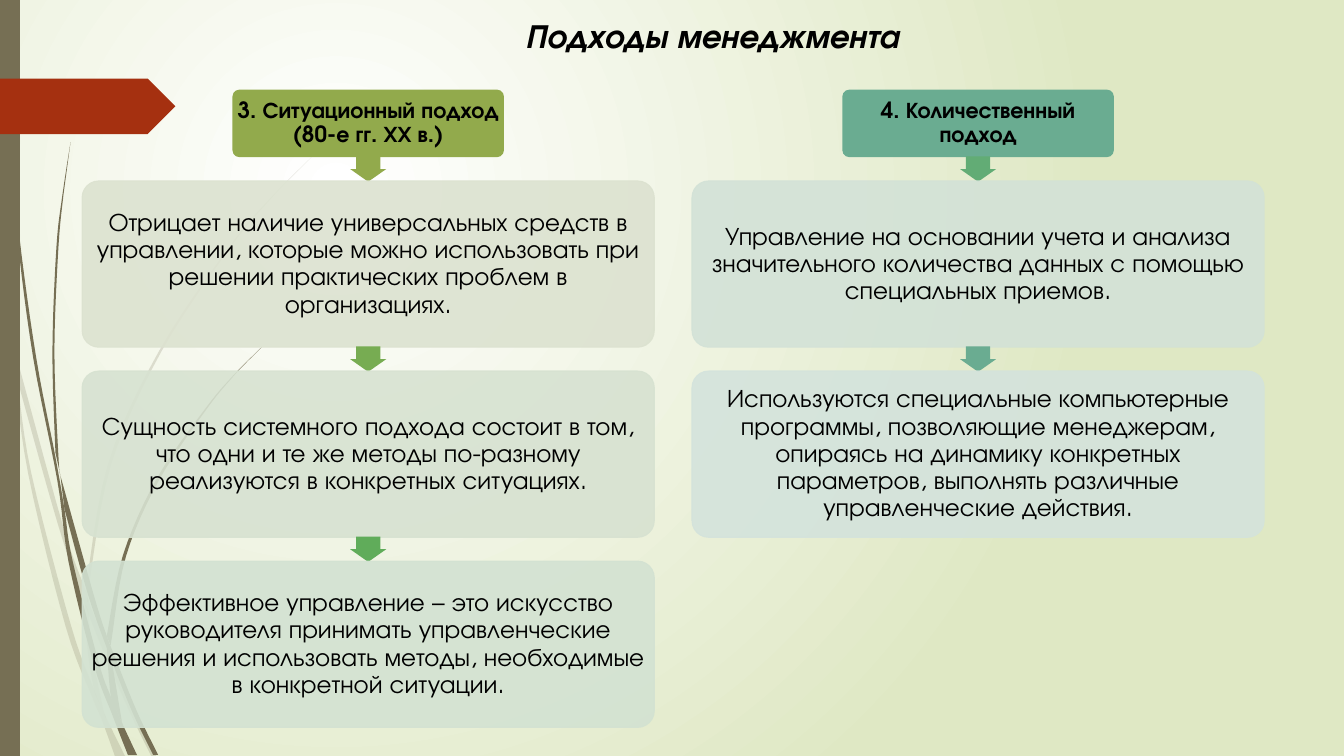
from dataclasses import dataclass

import lxml.etree
import pptx
import pptx.dml.color
import pptx.enum.shapes
import pptx.enum.text
import pptx.oxml.ns
import pptx.util

Cm = pptx.util.Cm
SHAPE = pptx.enum.shapes.MSO_SHAPE
ALIGN = pptx.enum.text.PP_ALIGN
ANCHOR = pptx.enum.text.MSO_ANCHOR
qn = pptx.oxml.ns.qn


@dataclass(frozen=True)
class Theme:
    font: str = "TeX Gyre Adventor"
    text: str = "000000"
    glow: str = "FFFFFF"
    backdrop: str = "DFE8C4"
    bark: str = "766F54"
    tag: str = "A53010"
    title_size: int = 24
    header_size: int = 16
    body_size: int = 18
    pale_alpha: int = 20
    panel_alpha: int = 90


THEME = Theme()
UNIT = 2.54  # blade outlines are plotted on a 2.54 cm grid

COLUMN_LEFT, COLUMN_PITCH = 2.07, 15.37
PANEL_W, PANEL_H = 14.42, 4.19
HEADER_TOP, HEADER_W, HEADER_H = 2.26, 6.84, 1.7
ARROW_W, ARROW_H = 0.91, 0.64
GAP = 0.6

# Each blade is one edge going out and the other edge coming back.
PALE_BLADES = [
    ([(0, 2.82), (0.09, 3.22), (0.17, 3.76), (0.31, 4.69), (0.7, 6.19),
      (0.93, 6.83), (1.05, 7.11), (1.24, 7.5)],
     [(1.14, 7.5), (1.01, 7.14), (0.92, 6.93), (0.65, 6.21), (0.28, 4.7),
      (0.11, 3.5), (0, 2.99)]),
    ([(0.14, 3.45), (0.62, 5.2), (0.85, 5.86), (0.92, 6.07), (1.27, 6.92), (1.55, 7.5)],
     [(1.5, 7.5), (1.23, 6.94), (0.88, 6.1), (0.58, 5.22), (0.17, 3.76)]),
    ([(0.84, 5.99), (0.88, 6.08), (0.91, 6.46), (1.03, 7.06), (1.05, 7.11)],
     [(0.96, 6.92), (0.93, 6.83), (0.87, 6.46), (0.84, 5.99)]),
    ([(0.85, 5.86), (1.07, 4.61), (1.58, 3.48), (2.28, 2.44), (2.68, 1.97), (3.12, 1.53)],
     [(2.9, 1.75), (2.68, 1.98), (2.29, 2.45), (1.6, 3.49), (1.1, 4.62),
      (0.88, 5.84), (0.88, 5.96)]),
]
DARK_BLADES = [
    ([(0.04, 0), (0.04, 0.48), (0.08, 1.09), (0.19, 2.32), (0.36, 3.55), (0.55, 4.53),
      (0.64, 5.05), (0.72, 5.56), (0.98, 6.57), (1.1, 6.91), (1.22, 7.19), (1.36, 7.49)],
     [(1.27, 7.49), (1.11, 7.08), (0.93, 6.59), (0.68, 5.57), (0.57, 4.77),
      (0.33, 3.55), (0.17, 2.33), (0.07, 1.1), (0.04, 0.48), (0.03, 0)]),
    ([(0.6, 4.72), (0.93, 5.9), (1.06, 6.31), (1.13, 6.49), (1.36, 7.06), (1.57, 7.49)],
     [(1.52, 7.49), (1.32, 7.08), (1.11, 6.56), (0.88, 5.92), (0.64, 5.05)]),
    ([(1.06, 6.33), (1.11, 6.56), (1.21, 7.16), (1.22, 7.19)],
     [(1.16, 7.06), (1.1, 6.91), (1.06, 6.45)]),
    ([(1.06, 6.31), (1.22, 5.51), (1.56, 4.74), (2.04, 4.05), (2.31, 3.73), (2.6, 3.44)],
     [(2.45, 3.59), (2.31, 3.74), (2.05, 4.06), (1.58, 4.76), (1.25, 5.52),
      (1.11, 6.33), (1.1, 6.41)]),
    ([(0.55, 4.49), (0.52, 3.49), (0.56, 2.45), (0.62, 1.93), (0.7, 1.41)],
     [(0.63, 1.93), (0.58, 2.45), (0.54, 3.49), (0.58, 4.53), (0.6, 4.72)]),
]

# Header text and colour, then (arrow colour, panel colour, panel text).
COLUMNS = [
    ("3. Ситуационный подход (80-е гг. ХХ в.)", "92AA4C", [
        ("92AA4C", "DCE2D0", "Отрицает наличие универсальных средств в управлении, "
         "которые можно использовать при решении практических проблем в организациях."),
        ("77AC52", "D7E2D1", "Сущность системного подхода состоит в том, что одни и те же "
         "методы по-разному реализуются в конкретных ситуациях."),
        ("60AC5A", "D3E2D2", "Эффективное управление – это искусство руководителя принимать "
         "управленческие решения и использовать методы, необходимые в конкретной ситуации."),
    ]),
    ("4. Количественный подход", "6AAC91", [
        ("62AC75", "D3E2D7", "Управление на основании учета и анализа значительного "
         "количества данных с помощью специальных приемов."),
        ("6AAC91", "D4E3DC", "Используются специальные компьютерные программы, позволяющие "
         "менеджерам, опираясь на динамику конкретных параметров, выполнять различные "
         "управленческие действия."),
    ]),
]


def rgb(value):
    return pptx.dml.color.RGBColor.from_string(value)


def paint(sp, color, alpha=100):
    sp.shadow.inherit = False
    sp.fill.solid()
    sp.fill.fore_color.rgb = rgb(color)
    sp.line.fill.background()
    set_alpha(sp, alpha)


def set_alpha(sp, percent):
    """Make every plain colour of the shape's fill and line translucent."""
    if percent < 100:
        for clr in sp._element.spPr.iter(qn("a:srgbClr")):
            for old in clr.findall(qn("a:alpha")):
                clr.remove(old)
            lxml.etree.SubElement(clr, qn("a:alpha"), val=str(percent * 1000))


def write(sp, text, size, bold=False, italic=False):
    p = sp.text_frame.paragraphs[0]
    p.text = text
    for r in p.runs:
        r.font.name = THEME.font
        r.font.size = pptx.util.Pt(size)
        r.font.bold, r.font.italic = bold, italic
        r.font.color.rgb = rgb(THEME.text)
    return p


def add_block(s, kind, left, top, width, height, color):
    sp = s.shapes.add_shape(kind, Cm(left), Cm(top), Cm(width), Cm(height))
    paint(sp, color)
    return sp


def add_card(s, left, top, width, height, color, text, size, bold=False):
    sp = add_block(s, SHAPE.ROUNDED_RECTANGLE, left, top, width, height, color)
    sp.adjustments[0] = 0.1
    tf = sp.text_frame
    tf.word_wrap = True
    tf.vertical_anchor = ANCHOR.MIDDLE
    tf.margin_left = tf.margin_right = tf.margin_top = tf.margin_bottom = Cm(0.05)
    p = write(sp, text, size, bold)
    p.alignment = ALIGN.CENTER
    p.line_spacing = 0.9
    return sp


def add_column(s, left, header, color, steps):
    center = left + PANEL_W / 2
    add_card(s, center - HEADER_W / 2, HEADER_TOP, HEADER_W, HEADER_H, color,
             header, THEME.header_size, bold=True)
    top = HEADER_TOP + HEADER_H + GAP
    for arrow_color, panel_color, text in steps:
        arrow = add_block(s, SHAPE.DOWN_ARROW, center - ARROW_W / 2,
                          top - (GAP + ARROW_H) / 2, ARROW_W, ARROW_H, arrow_color)
        arrow.adjustments[0], arrow.adjustments[1] = 0.67, 0.5
        panel = add_card(s, left, top, PANEL_W, PANEL_H, panel_color, text, THEME.body_size)
        panel.line.color.rgb = rgb(panel_color)
        panel.line.width = pptx.util.Pt(0.75)
        set_alpha(panel, THEME.panel_alpha)
        top += PANEL_H + GAP


def smooth(points, steps=6):
    """Return points along a Catmull-Rom curve through the given points."""
    padded = [points[0], *points, points[-1]]
    curve = [points[0]]
    for a, b, c, d in zip(padded, padded[1:], padded[2:], padded[3:]):
        for t in (i / steps for i in range(1, steps + 1)):
            curve.append(tuple(
                (2 * q + (r - p) * t + (2 * p - 5 * q + 4 * r - w) * t ** 2
                 + (3 * q - p - 3 * r + w) * t ** 3) / 2
                for p, q, r, w in zip(a, b, c, d)))
    return curve


def add_blade(s, out, back, alpha=100):
    outline = [(Cm(x * UNIT), Cm(y * UNIT)) for x, y in smooth(out) + smooth(back)]
    builder = s.shapes.build_freeform(*outline[0])
    builder.add_line_segments(outline[1:], close=True)
    paint(builder.convert_to_shape(), THEME.bark, alpha)


def set_background(s):
    fill = s.background.fill
    fill.gradient()
    for stop, color in zip(fill.gradient_stops, (THEME.glow, THEME.backdrop)):
        stop.color.rgb = rgb(color)
    fill.gradient_stops[0].position, fill.gradient_stops[1].position = 0, 1
    lin = next(s._element.iter(qn("a:lin")))
    radial = lxml.etree.Element(qn("a:path"), path="circle")
    lxml.etree.SubElement(radial, qn("a:fillToRect"),
                          l="50000", t="50000", r="100000", b="100000")
    lin.getparent().replace(lin, radial)


def set_title(s, text):
    sp = s.shapes.title
    sp.left, sp.top, sp.width, sp.height = Cm(12.98), Cm(0.25), Cm(11), Cm(1.27)
    tf = sp.text_frame
    tf.word_wrap = False
    tf.auto_size = pptx.enum.text.MSO_AUTO_SIZE.NONE
    tf.vertical_anchor = ANCHOR.TOP
    write(sp, text, THEME.title_size, bold=True, italic=True).alignment = ALIGN.LEFT


def main():
    prs = pptx.Presentation()
    prs.slide_width, prs.slide_height = Cm(33.87), Cm(19.05)
    s = prs.slides.add_slide(prs.slide_layouts[5])
    set_background(s)
    for out, back in PALE_BLADES:
        add_blade(s, out, back, THEME.pale_alpha)
    for out, back in DARK_BLADES:
        add_blade(s, out, back)
    add_block(s, SHAPE.RECTANGLE, 0, 0, 0.5, 19.05, THEME.bark)
    add_block(s, SHAPE.PENTAGON, 0, 1.98, 4.42, 1.4, THEME.tag)
    set_title(s, "Подходы менеджмента")
    for i, (header, color, steps) in enumerate(COLUMNS):
        add_column(s, COLUMN_LEFT + i * COLUMN_PITCH, header, color, steps)
    prs.save("out.pptx")


if __name__ == "__main__":
    main()
